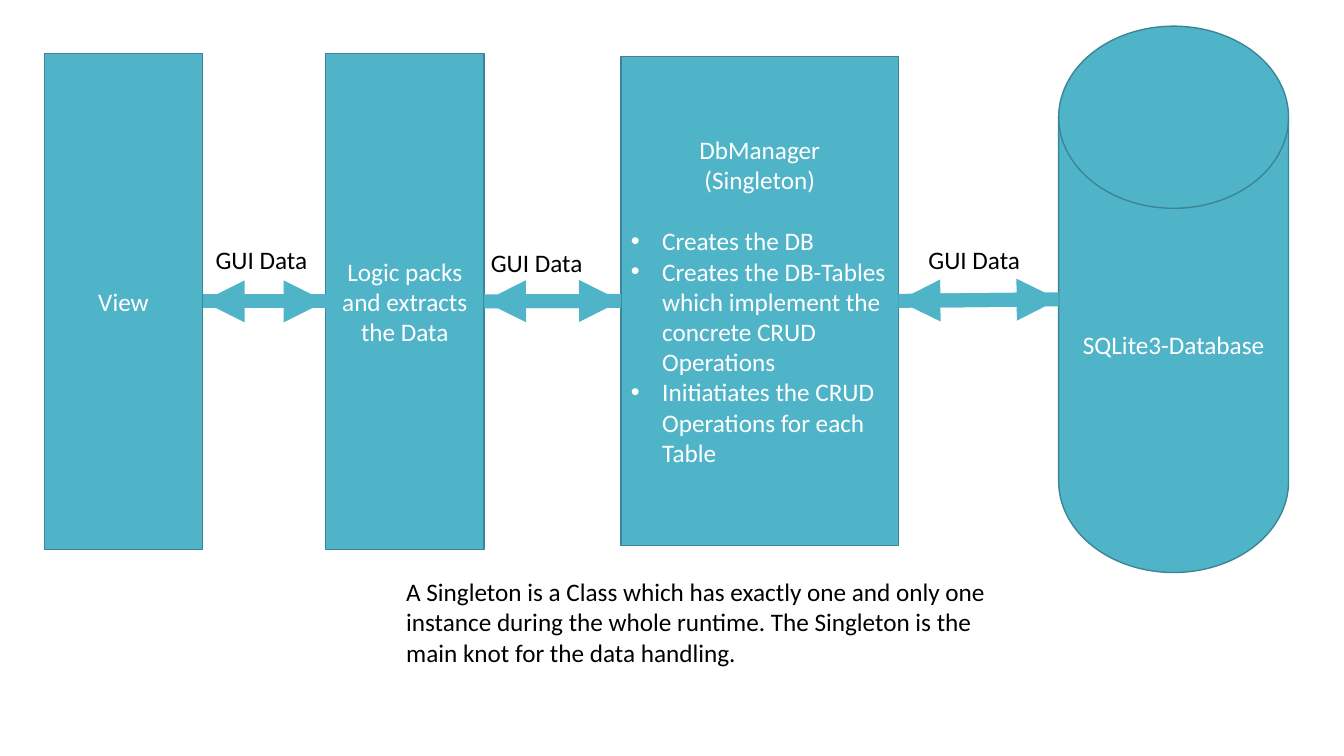
import pptx
import pptx.util
import pptx.dml.color
import pptx.enum.shapes
import pptx.enum.text
import pptx.oxml
import pptx.oxml.ns
from lxml import etree

PX = 9144  # EMU per px, 100 px to the inch
TEAL = pptx.dml.color.RGBColor(0x50, 0xB4, 0xC8)
DARK_TEAL = pptx.dml.color.RGBColor(0x3B, 0x85, 0x94)
WHITE = pptx.dml.color.RGBColor(0xFF, 0xFF, 0xFF)
BLACK = pptx.dml.color.RGBColor(0, 0, 0)
SHAPES = pptx.enum.shapes.MSO_SHAPE
ALIGN = pptx.enum.text.PP_ALIGN
LEFT, RIGHT = 1, 3  # connection sites of a rectangle

DUTIES = [
    "Creates the DB",
    "Creates the DB-Tables which implement the concrete CRUD Operations",
    "Initiatiates the CRUD Operations for each Table",
]


def emu(box):
    return [pptx.util.Emu(length * PX) for length in box]


def write(paragraph, text, color, alignment):
    paragraph.text = text
    paragraph.alignment = alignment
    paragraph.font.name = "Calibri"
    paragraph.font.size = pptx.util.Pt(18)
    paragraph.font.color.rgb = color


def add_layer(slide, box, text, kind=SHAPES.RECTANGLE):
    """One filled layer of the architecture."""
    shape = slide.shapes.add_shape(kind, *emu(box))
    shape.shadow.inherit = False
    shape.fill.solid()
    shape.fill.fore_color.rgb = TEAL
    shape.line.color.rgb = DARK_TEAL
    shape.line.width = pptx.util.Pt(1)
    frame = shape.text_frame
    frame.word_wrap = True
    frame.vertical_anchor = pptx.enum.text.MSO_ANCHOR.MIDDLE
    write(frame.paragraphs[0], text, WHITE, ALIGN.CENTER)
    return shape


def add_duties(shape, duties):
    """Bulleted list under the heading of a layer."""
    for index, duty in enumerate(duties):
        paragraph = shape.text_frame.add_paragraph()
        write(paragraph, duty, WHITE, ALIGN.LEFT)
        if index == 0:
            paragraph.space_before = pptx.util.Pt(22)
        properties = paragraph._p.get_or_add_pPr()
        properties.set("marL", str(31 * PX))
        properties.set("indent", str(-31 * PX))
        for tag, name, value in (("a:buFont", "typeface", "Arial"), ("a:buChar", "char", "•")):
            bullet = etree.SubElement(properties, pptx.oxml.ns.qn(tag))
            bullet.set(name, value)


def add_text(slide, box, text, wrap):
    text_box = slide.shapes.add_textbox(*emu(box))
    frame = text_box.text_frame
    frame.word_wrap = wrap
    frame.auto_size = pptx.enum.text.MSO_AUTO_SIZE.SHAPE_TO_FIT_TEXT
    write(frame.paragraphs[0], text, BLACK, ALIGN.LEFT)


def side_point(shape, side):
    x = shape.left if side == LEFT else shape.left + shape.width
    return x, shape.top + shape.height // 2


def add_arrow(slide, start, end):
    """Arrow between the sides of two layers, each given as (shape, side)."""
    connector = slide.shapes.add_connector(
        pptx.enum.shapes.MSO_CONNECTOR.STRAIGHT, *side_point(*start), *side_point(*end))
    for (shape, side), join in ((start, connector.begin_connect), (end, connector.end_connect)):
        if shape.auto_shape_type == SHAPES.RECTANGLE:
            join(shape, side)
    connector.line.color.rgb = TEAL
    connector.line.width = pptx.util.Pt(10)
    line = connector.line._get_or_add_ln()
    etree.SubElement(line, pptx.oxml.ns.qn("a:tailEnd")).set("type", "triangle")
    etree.SubElement(connector._element.spPr, pptx.oxml.ns.qn("a:effectLst"))


def add_exchange(slide, left_layer, right_layer, label_box):
    """Data flowing both ways between neighbouring layers."""
    ends = (left_layer, RIGHT), (right_layer, LEFT)
    add_arrow(slide, *ends)
    add_arrow(slide, *reversed(ends))
    add_text(slide, label_box, "GUI Data", False)


def build_architecture_slide(presentation):
    slide = presentation.slides.add_slide(presentation.slide_layouts[6])

    # Layers
    view = add_layer(slide, (44, 53, 157, 492), "View")
    logic = add_layer(slide, (323, 53, 157, 492), "Logic packs and extracts the Data")
    manager = add_layer(slide, (616, 56, 275, 485), "DbManager\v(Singleton)")
    add_duties(manager, DUTIES)
    database = add_layer(slide, (1050, 26, 228, 542), "SQLite3-Database",
                         SHAPES.FLOWCHART_MAGNETIC_DISK)

    # Exchanges between neighbours
    add_exchange(slide, view, logic, (204, 237, 113, 40))
    add_exchange(slide, logic, manager, (477, 240, 113, 40))
    add_exchange(slide, manager, database, (911, 237, 113, 40))

    # Explanation
    add_text(slide, (393, 567, 605, 101),
             "A Singleton is a Class which has exactly one and only one instance during the "
             "whole runtime. The Singleton is the main knot for the data handling.", True)


def main():
    presentation = pptx.Presentation()
    presentation.slide_width, presentation.slide_height = emu((1333, 750))
    build_architecture_slide(presentation)
    presentation.save("out.pptx")


if __name__ == "__main__":
    main()
